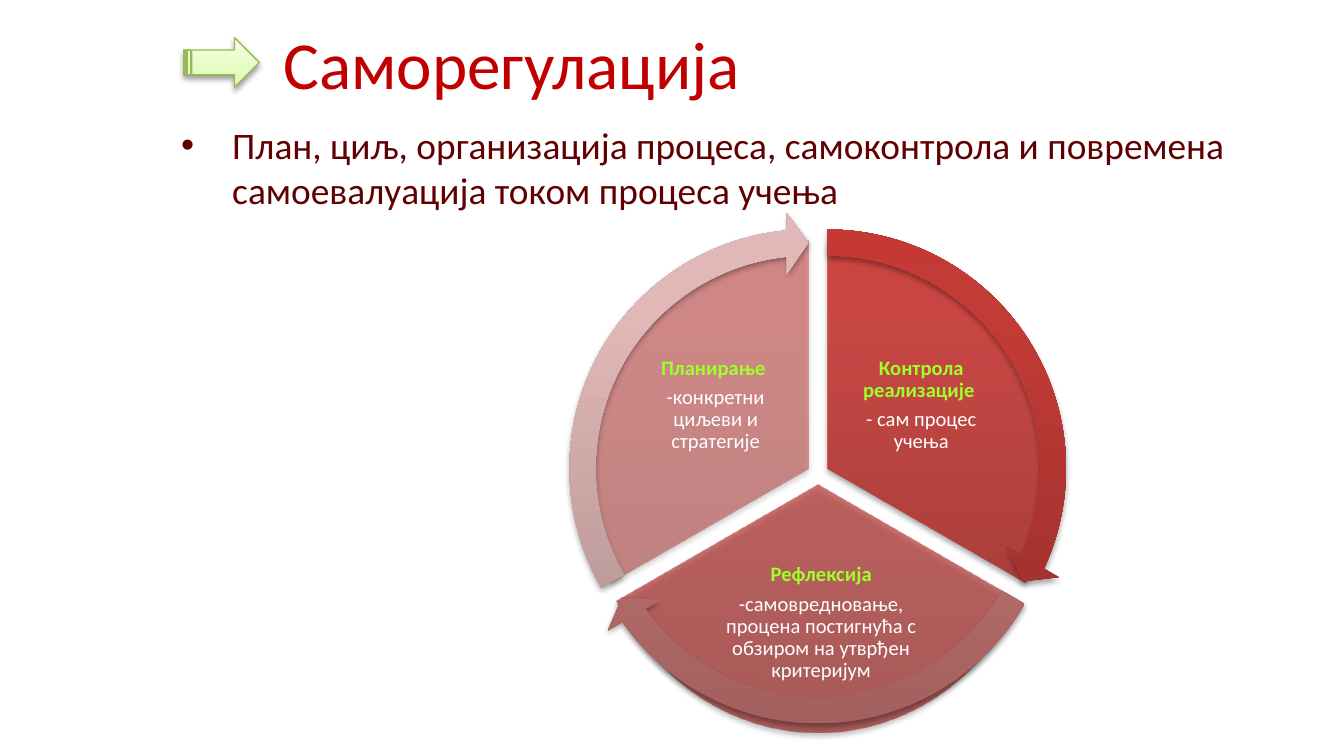
from lxml import etree
from pptx import Presentation
from pptx.dml.color import RGBColor
from pptx.enum.shapes import MSO_SHAPE as Preset
from pptx.enum.text import MSO_ANCHOR as Anchor, PP_ALIGN as Align
from pptx.oxml.ns import qn
from pptx.util import Inches, Pt

FONT = "Calibri"
RED, MAROON, LIME, WHITE = "C00000", "600000", "9EFF29", "FFFFFF"
GREEN_LINE = "98B955"
STEP = 0.07  # each sector sits this much further left than the one before
PIE_STOPS = [(0, "9C2F2D"), (80, "CB3E3A"), (100, "CE3B37")]
GREEN_STOPS = [(0, "DAFDA7"), (35, "E4FCC2"), (100, "F5FFE7")]

# pie top, height, angles and opacity; arrow top, angles and colours; text
SECTORS = [
    {"pie": (1.79, 3.39, [162, 18], 90),
     "arrow": (1.58, [14.725, 161.994], ["952D2B", "C23B37", "C53935"]),
     "label": (6.25, 2.51, 1.21, 1.01),
     "text": ("Контрола реализације ", "- сам процес учења")},
    {"pie": (1.76, 3.69, [18, 90], 70),
     "arrow": (1.7, [86.72, 18.005], ["A05F5D", "CF7B79", "D27A78"]),
     "label": (5.2, 4.15, 1.82, 0.97),
     "text": ("Рефлексија",
              "-самовредновање, процена постигнућа с обзиром на утврђен критеријум")},
    {"pie": (1.79, 3.39, [90, 162], 50),
     "arrow": (1.58, [158.73, 90], ["AD8E8D", "E0B8B7", "E2B8B7"]),
     "label": (4.72, 2.51, 1.21, 1.01),
     "text": ("Планирање ", "-конкретни циљеви и стратегије")},
]


def color(value):
    return RGBColor.from_string(value)


def apply(target, values):
    """Set every attribute named in the dict."""
    for name, value in values.items():
        setattr(target, name, value)


def add_element(parent, tag, **attributes):
    element = etree.SubElement(parent, qn(tag))
    for name, value in attributes.items():
        element.set(name, str(value))
    return element


class SlideBuilder:
    def __init__(self, slide):
        self.slide = slide

    def shape(self, preset, box, stops, adjustments=(), opacity=100,
              line=None, shadow_opacity=35):
        """Add a preset shape with a bottom-to-top gradient and a soft shadow."""
        shape = self.slide.shapes.add_shape(preset, *map(Inches, box))
        for index, value in enumerate(adjustments):
            shape.adjustments[index] = value
        self.gradient(shape, stops, opacity)
        if line:
            shape.line.color.rgb = color(line)
            shape.line.width = Pt(0.75)
        else:
            shape.line.fill.background()
        self.shadow(shape, shadow_opacity)

    def gradient(self, shape, stops, opacity):
        shape.fill.gradient()
        shape.fill.gradient_angle = 90
        stop_list = shape._element.spPr.find(".//" + qn("a:gsLst"))
        for stop in list(stop_list):
            stop_list.remove(stop)
        for position, value in stops:
            stop = add_element(stop_list, "a:gs", pos=position * 1000)
            fill = add_element(stop, "a:srgbClr", val=value)
            if opacity < 100:
                add_element(fill, "a:alpha", val=opacity * 1000)

    def shadow(self, shape, opacity):
        shape.shadow.inherit = False
        effects = shape._element.spPr.find(qn("a:effectLst"))
        outer = add_element(effects, "a:outerShdw", blurRad=Pt(3.1), dist=Pt(1.8),
                            dir=90 * 60000, rotWithShape=0)
        black = add_element(outer, "a:srgbClr", val="000000")
        add_element(black, "a:alpha", val=opacity * 1000)

    def text(self, box, lines, size, frame_format=None, paragraph_format=None,
             bullet=False):
        """Add a text box; lines are (text, colour, bold) tuples."""
        frame = self.slide.shapes.add_textbox(*map(Inches, box)).text_frame
        apply(frame, {"word_wrap": True, **(frame_format or {})})
        for index, (text, value, bold) in enumerate(lines):
            paragraph = frame.add_paragraph() if index else frame.paragraphs[0]
            paragraph.text = text
            apply(paragraph, paragraph_format or {})
            if bullet:
                properties = paragraph._p.get_or_add_pPr()
                properties.set("marL", str(Inches(0.38)))
                properties.set("indent", str(Inches(-0.38)))
                add_element(properties, "a:buFont", typeface="Arial")
                add_element(properties, "a:buChar", char="•")
            apply(paragraph.runs[0].font, {"name": FONT, "size": Pt(size), "bold": bold})
            paragraph.runs[0].font.color.rgb = color(value)

    def pie(self, index, top, height, angles, opacity):
        self.shape(Preset.PIE, (4.46 - STEP * index, top, 3.39, height),
                   PIE_STOPS, angles, opacity)

    def label(self, box, heading, detail):
        margins = ("margin_left", "margin_top", "margin_right", "margin_bottom")
        self.text(box, [(heading, LIME, True), (detail, WHITE, False)], 11,
                  {"vertical_anchor": Anchor.MIDDLE,
                   **dict.fromkeys(margins, Inches(0.02))},
                  {"alignment": Align.CENTER, "line_spacing": 0.9,
                   "space_after": Pt(3.85)})

    def cycle_arrow(self, index, top, angles, colors):
        self.shape(Preset.CIRCULAR_ARROW, (4.25 - STEP * index, top, 3.81, 3.81),
                   zip((0, 80, 100), colors), [0.051, 3.275, *angles, 0.059])


def main():
    presentation = Presentation()
    presentation.slide_width = Inches(10)
    presentation.slide_height = Inches(10 * 9 / 16)
    slide = presentation.slides.add_slide(presentation.slide_layouts[6])
    builder = SlideBuilder(slide)

    builder.text((2.01, 0.07, 6.27, 0.79), [("Саморегулација", RED, False)], 36,
                 {"vertical_anchor": Anchor.MIDDLE})
    builder.text((1.25, 0.86, 8.33, 4.69),
                 [("План, циљ, организација процеса, самоконтрола и повремена "
                   "самоевалуација током процеса учења", MAROON, False)],
                 20, bullet=True)

    for index, sector in enumerate(SECTORS):
        builder.pie(index, *sector["pie"])
        builder.label(sector["label"], *sector["text"])
    for index, sector in enumerate(SECTORS):
        builder.cycle_arrow(index, *sector["arrow"])

    builder.shape(Preset.STRIPED_RIGHT_ARROW, (1.37, 0.28, 0.56, 0.37), GREEN_STOPS,
                  line=GREEN_LINE, shadow_opacity=38)
    presentation.save("out.pptx")


if __name__ == "__main__":
    main()
